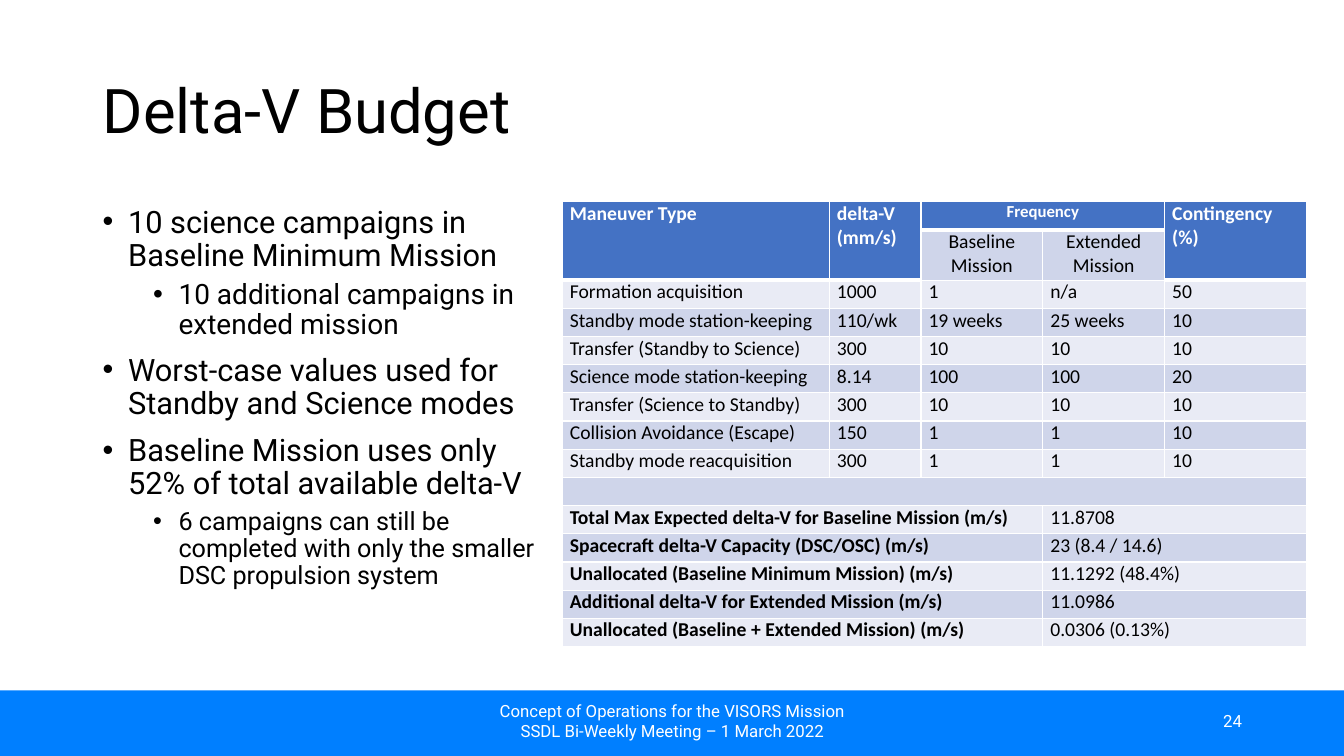
from lxml.etree import SubElement
from pptx import Presentation
from pptx.dml.color import RGBColor
from pptx.enum.shapes import MSO_SHAPE as Shape
from pptx.enum.text import MSO_ANCHOR as Anchor, PP_ALIGN as Align
from pptx.oxml.ns import qn
from pptx.util import Cm, Pt

COLORS = {
    "text": "000000",
    "white": "FFFFFF",
    "footer": "007FFF",
    "header": "4472C4",
    "dark band": "CFD5EA",
    "light band": "E9EBF5",
}

# Level, size in points, wording
POINTS = [
    (0, 22, "10 science campaigns in Baseline Minimum Mission"),
    (1, 20, "10 additional campaigns in extended mission"),
    (0, 22, "Worst-case values used for Standby and Science modes"),
    (0, 22, "Baseline Mission uses only 52% of total available delta-V"),
    (1, 18, "6 campaigns can still be completed with only the smaller DSC propulsion system"),
]

COLUMN_WIDTHS = [6.73, 2.31, 3.07, 3.07, 3.58]
ROW_HEIGHT, SUBHEADER_HEIGHT = 0.71, 1.27
MANEUVERS = [
    ("Formation acquisition", "1000", "1", "n/a", "50"),
    ("Standby mode station-keeping", "110/wk", "19 weeks", "25 weeks", "10"),
    ("Transfer (Standby to Science)", "300", "10", "10", "10"),
    ("Science mode station-keeping", "8.14", "100", "100", "20"),
    ("Transfer (Science to Standby)", "300", "10", "10", "10"),
    ("Collision Avoidance (Escape)", "150", "1", "1", "10"),
    ("Standby mode reacquisition", "300", "1", "1", "10"),
]
TOTALS = [
    ("Total Max Expected delta-V for Baseline Mission (m/s)", "11.8708"),
    ("Spacecraft delta-V Capacity (DSC/OSC) (m/s)", "23 (8.4 / 14.6)"),
    ("Unallocated (Baseline Minimum Mission) (m/s)", "11.1292 (48.4%)"),
    ("Additional delta-V for Extended Mission (m/s)", "11.0986"),
    ("Unallocated (Baseline + Extended Mission) (m/s)", "0.0306 (0.13%)"),
]
FIRST_MANEUVER = 2
SPACER = FIRST_MANEUVER + len(MANEUVERS)
FIRST_TOTAL = SPACER + 1
ROW_COUNT = FIRST_TOTAL + len(TOTALS)


def rgb(name):
    return RGBColor.from_string(COLORS[name])


def set_font(paragraph, size, color="text", face="Roboto", bold=False):
    font = paragraph.font
    font.name, font.size, font.bold = face, Pt(size), bold
    font.color.rgb = rgb(color)


def add_title(slide, wording):
    title = slide.shapes.title
    title.left, title.top = Cm(2.34), Cm(1.02)
    title.width, title.height = Cm(26.24), Cm(3.68)
    title.text_frame.text = wording
    title.text_frame.vertical_anchor = Anchor.MIDDLE
    heading = title.text_frame.paragraphs[0]
    heading.alignment, heading.line_spacing = Align.LEFT, 0.9
    set_font(heading, 44)


def add_text_frame(slide, left, top, width, height):
    frame = slide.shapes.add_textbox(Cm(left), Cm(top), Cm(width), Cm(height)).text_frame
    frame.word_wrap = True
    return frame


def add_points(slide):
    frame = add_text_frame(slide, 2.34, 5.08, 11.43, 12.09)
    for index, (level, size, wording) in enumerate(POINTS):
        point = frame.paragraphs[0] if index == 0 else frame.add_paragraph()
        point.text, point.level, point.line_spacing = wording, level, 0.9
        if index:
            point.space_before = Pt(5 if level else 10)
        properties = point._p.get_or_add_pPr()
        properties.set("marL", str(Cm(1.91 if level else 0.64)))
        properties.set("indent", str(-Cm(0.64)))
        SubElement(properties, qn("a:buFont"), typeface="Arial")
        SubElement(properties, qn("a:buChar"), char="•")
        set_font(point, size)


def add_footer_bar(slide):
    bar = slide.shapes.add_shape(Shape.RECTANGLE, Cm(0), Cm(17.4), Cm(33.87), Cm(1.65))
    bar.shadow.inherit = False
    bar.fill.solid()
    bar.fill.fore_color.rgb = rgb("footer")
    bar.line.fill.background()


def add_footer_text(slide, left, width, lines, align):
    frame = add_text_frame(slide, left, 17.65, width, 1.02)
    frame.vertical_anchor = Anchor.MIDDLE
    frame.text = "\n".join(lines)
    for line in frame.paragraphs:
        line.alignment = align
        set_font(line, 12, "white")


def style_cell(cell, row, fill):
    cell.margin_left = cell.margin_right = Cm(0.19)
    cell.margin_top = cell.margin_bottom = 0
    borders = {"lnL": 1, "lnR": 1, "lnB": 3 if fill == "header" else 1}
    if row == 0:
        borders = {"lnL": 1, "lnR": 1, "lnT": 1, "lnB": 3}
    properties = cell._tc.get_or_add_tcPr()
    for side, width in borders.items():
        border = SubElement(properties, qn(f"a:{side}"), w=str(Pt(width)))
        solid = SubElement(border, qn("a:solidFill"))
        SubElement(solid, qn("a:srgbClr"), val=COLORS["white"])
    cell.fill.solid()
    cell.fill.fore_color.rgb = rgb(fill)


def write_cell(cell, wording, align, size=14, color="text", bold=False):
    cell.text_frame.text = wording
    entry = cell.text_frame.paragraphs[0]
    entry.alignment = align
    set_font(entry, size, color, "Calibri", bold)


def fill_budget(budget):
    # Header
    for column, wording in ((0, "Maneuver Type"), (1, "delta-V (mm/s)"), (4, "Contingency (%)")):
        write_cell(budget.cell(0, column), wording, Align.JUSTIFY, 14, "white", True)
        budget.cell(0, column).merge(budget.cell(1, column))
    write_cell(budget.cell(0, 2), "Frequency", Align.CENTER, 12, "white", True)
    budget.cell(0, 2).merge(budget.cell(0, 3))
    for column, wording in ((2, "Baseline Mission"), (3, "Extended Mission")):
        write_cell(budget.cell(1, column), wording, Align.CENTER)

    # Maneuvers
    for row, maneuver in enumerate(MANEUVERS, FIRST_MANEUVER):
        for column, wording in enumerate(maneuver):
            justified = column > 0 and row >= SPACER - 2
            write_cell(budget.cell(row, column), wording, Align.JUSTIFY if justified else Align.LEFT)

    # Spacer row
    budget.cell(SPACER, 0).merge(budget.cell(SPACER, 4))
    for cell in budget.rows[SPACER].cells:
        SubElement(cell.text_frame.paragraphs[0]._p, qn("a:endParaRPr"), sz="1400")

    # Totals
    for row, (label, amount) in enumerate(TOTALS, FIRST_TOTAL):
        write_cell(budget.cell(row, 0), label, Align.JUSTIFY, bold=True)
        write_cell(budget.cell(row, 3), amount, Align.JUSTIFY)
        budget.cell(row, 0).merge(budget.cell(row, 2))
        budget.cell(row, 3).merge(budget.cell(row, 4))


def add_budget(slide):
    height = ROW_HEIGHT * (ROW_COUNT - 1) + SUBHEADER_HEIGHT
    budget = slide.shapes.add_table(
        ROW_COUNT, len(COLUMN_WIDTHS), Cm(14.17), Cm(5.08), Cm(sum(COLUMN_WIDTHS)), Cm(height)
    ).table
    budget.first_row = budget.horz_banding = False
    for column, width in zip(budget.columns, COLUMN_WIDTHS):
        column.width = Cm(width)
    for index, row in enumerate(budget.rows):
        row.height = Cm(SUBHEADER_HEIGHT if index == 1 else ROW_HEIGHT)
        for column, cell in enumerate(row.cells):
            if index == 0 or (index == 1 and column not in (2, 3)):
                fill = "header"
            else:
                fill = "dark band" if index % 2 else "light band"
            style_cell(cell, index, fill)
    fill_budget(budget)


def main():
    deck = Presentation()
    deck.slide_width, deck.slide_height = Cm(33.87), Cm(19.05)
    slide = deck.slides.add_slide(deck.slide_layouts[5])
    add_footer_bar(slide)
    add_title(slide, "Delta-V Budget")
    add_points(slide)
    add_footer_text(slide, 23.93, 7.62, ["24"], Align.RIGHT)
    add_budget(slide)
    add_footer_text(
        slide, 11.23, 11.43,
        ["Concept of Operations for the VISORS Mission", "SSDL Bi-Weekly Meeting – 1 March 2022"],
        Align.CENTER,
    )
    deck.save("out.pptx")


if __name__ == "__main__":
    main()
